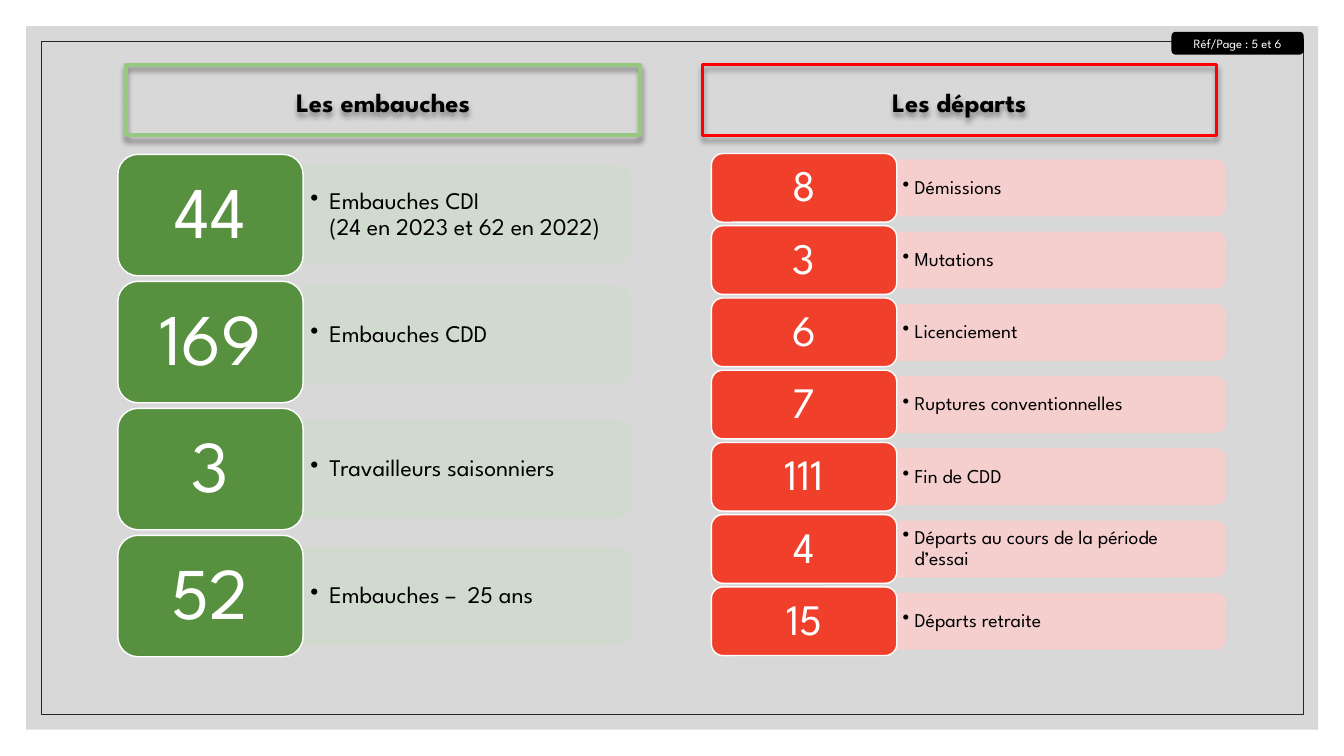
import pptx
import pptx.util
from lxml import etree
from pptx.dml.color import RGBColor
from pptx.enum.shapes import MSO_SHAPE
from pptx.enum.text import MSO_ANCHOR, PP_ALIGN
from pptx.oxml.ns import qn
from pptx.util import Cm, Pt

FONT = "League Spartan"
BLACK = RGBColor(0x00, 0x00, 0x00)
WHITE = RGBColor(0xFF, 0xFF, 0xFF)
PANEL_GREY = RGBColor(0xBF, 0xBF, 0xBF)
FRAME_GREY = RGBColor(0x26, 0x26, 0x26)
GREEN = RGBColor(0x57, 0x90, 0x3F)
LIGHT_GREEN = RGBColor(0x96, 0xC8, 0x81)
PALE_GREEN = RGBColor(0xD1, 0xDB, 0xCF)
RED = RGBColor(0xFF, 0x00, 0x00)
ORANGE_RED = RGBColor(0xF0, 0x3F, 0x2B)
PALE_RED = RGBColor(0xF9, 0xCF, 0xCD)

PAGE_REFERENCE = "Réf/Page : 5 et 6"
COLUMNS = [
    {
        "heading": "Les embauches", "heading_left": 3.18, "border": LIGHT_GREEN, "border_width": 3,
        "card_color": GREEN, "bar_color": PALE_GREEN,
        "left": 2.97, "top": 3.89, "pitch": 3.2, "card_height": 3.06, "bar_height": 2.44,
        "number_size": 52, "label_size": 17, "indent": 0.48, "inset": 0.18,
        "rows": [("44", ["Embauches CDI", "(24 en 2023 et 62 en 2022)"], 0),
                 ("169", ["Embauches CDD"], -0.17),
                 ("3", ["Travailleurs saisonniers"], 0),
                 ("52", ["Embauches –  25 ans"], 0)],
    },
    {
        "heading": "Les départs", "heading_left": 17.7, "border": RED, "border_width": 2.25,
        "card_color": ORANGE_RED, "bar_color": PALE_RED,
        "left": 17.93, "top": 3.87, "pitch": 1.82, "card_height": 1.73, "bar_height": 1.4,
        "number_size": 31, "label_size": 14, "indent": 0.3, "inset": 0.15,
        "rows": [("8", ["Démissions"], 0),
                 ("3", ["Mutations"], 0),
                 ("6", ["Licenciement"], 0),
                 ("7", ["Ruptures conventionnelles"], 0),
                 ("111", ["Fin de CDD"], 0),
                 ("4", ["Départs au cours de la période d’essai"], 0),
                 ("15", ["Départs retraite"], 0)],
    },
]
CARD_WIDTH = 4.67
BAR_WIDTH = 8.28


def set_alpha(color_format_parent, percent):
    for color in color_format_parent.iter(qn("a:srgbClr")):
        etree.SubElement(color, qn("a:alpha"), val=str(percent * 1000))


def add_box(slide, kind, left, top, width, height, fill, line, line_width):
    shape = slide.shapes.add_shape(kind, Cm(left), Cm(top), Cm(width), Cm(height))
    shape.shadow.inherit = False
    if fill is None:
        shape.fill.background()
    else:
        shape.fill.solid()
        shape.fill.fore_color.rgb = fill
    if line is None:
        shape.line.fill.background()
    else:
        shape.line.color.rgb = line
        shape.line.width = Pt(line_width)
    return shape


def write_text(shape, lines, size, color, align, spacing=0.9, bold=False, indent=None):
    frame = shape.text_frame
    frame.word_wrap = True
    frame.vertical_anchor = MSO_ANCHOR.MIDDLE
    paragraph = frame.paragraphs[0]
    paragraph.alignment = align
    paragraph.line_spacing = spacing
    if indent:
        properties = paragraph._p.get_or_add_pPr()
        properties.set("marL", str(Cm(indent)))
        properties.set("indent", str(-Cm(indent)))
        etree.SubElement(properties, qn("a:buChar"), char="•")
    for index, line in enumerate(lines):
        if index:
            paragraph.add_line_break()
        run = paragraph.add_run()
        run.text = line
        run.font.name = FONT
        run.font.size = Pt(size)
        run.font.bold = bold
        run.font.color.rgb = color


def add_heading(slide, column):
    heading = add_box(slide, MSO_SHAPE.RECTANGLE, column["heading_left"], 1.63, 12.95, 1.78,
                      None, column["border"], column["border_width"])
    effects = heading._element.spPr.find(qn("a:effectLst"))
    shadow = etree.SubElement(effects, qn("a:outerShdw"), blurRad=str(Pt(4)), dist=str(Pt(3)),
                              dir="5400000", algn="t", rotWithShape="0")
    etree.SubElement(shadow, qn("a:srgbClr"), val=str(BLACK))
    set_alpha(shadow, 40)
    write_text(heading, [column["heading"]], 19, BLACK, PP_ALIGN.CENTER, 1.1, True)


def add_row(slide, column, index, number, lines, bar_shift):
    card_top = column["top"] + index * column["pitch"]
    bar_height = column["bar_height"]
    bar_left = column["left"] + CARD_WIDTH
    bar_middle = card_top + column["card_height"] / 2 + bar_shift
    bar = add_box(slide, MSO_SHAPE.ROUND_2_SAME_RECTANGLE,
                  bar_left + (BAR_WIDTH - bar_height) / 2, bar_middle - BAR_WIDTH / 2,
                  bar_height, BAR_WIDTH, column["bar_color"], column["bar_color"], 1)
    bar.rotation = 90
    set_alpha(bar._element.spPr, 90)

    label = slide.shapes.add_textbox(Cm(bar_left), Cm(bar_middle - bar_height / 2),
                                     Cm(BAR_WIDTH - 0.08), Cm(bar_height))
    frame = label.text_frame
    frame.margin_left = frame.margin_right = Cm(column["inset"])
    frame.margin_top = frame.margin_bottom = Cm(column["inset"] / 2)
    write_text(label, lines, column["label_size"], BLACK, PP_ALIGN.LEFT, indent=column["indent"])

    card = add_box(slide, MSO_SHAPE.ROUNDED_RECTANGLE, column["left"], card_top,
                   CARD_WIDTH, column["card_height"], column["card_color"], WHITE, 1)
    write_text(card, [number], column["number_size"], WHITE, PP_ALIGN.CENTER)


def main():
    presentation = pptx.Presentation()
    presentation.slide_width = Cm(33.87)
    presentation.slide_height = Cm(19.05)
    slide = presentation.slides.add_slide(presentation.slide_layouts[6])

    panel = add_box(slide, MSO_SHAPE.RECTANGLE, 0.66, 0.66, 32.56, 17.73, PANEL_GREY, None, 0)
    set_alpha(panel._element.spPr, 60)
    add_box(slide, MSO_SHAPE.RECTANGLE, 1.04, 1.04, 31.8, 16.97, None, FRAME_GREY, 0.5)

    for column in COLUMNS:
        add_heading(slide, column)
        for index, row in enumerate(column["rows"]):
            add_row(slide, column, index, *row)

    badge = add_box(slide, MSO_SHAPE.ROUNDED_RECTANGLE, 29.54, 0.82, 3.3, 0.54, BLACK, BLACK, 1)
    write_text(badge, [PAGE_REFERENCE], 9, WHITE, PP_ALIGN.CENTER, 1)
    presentation.save("out.pptx")


if __name__ == "__main__":
    main()
